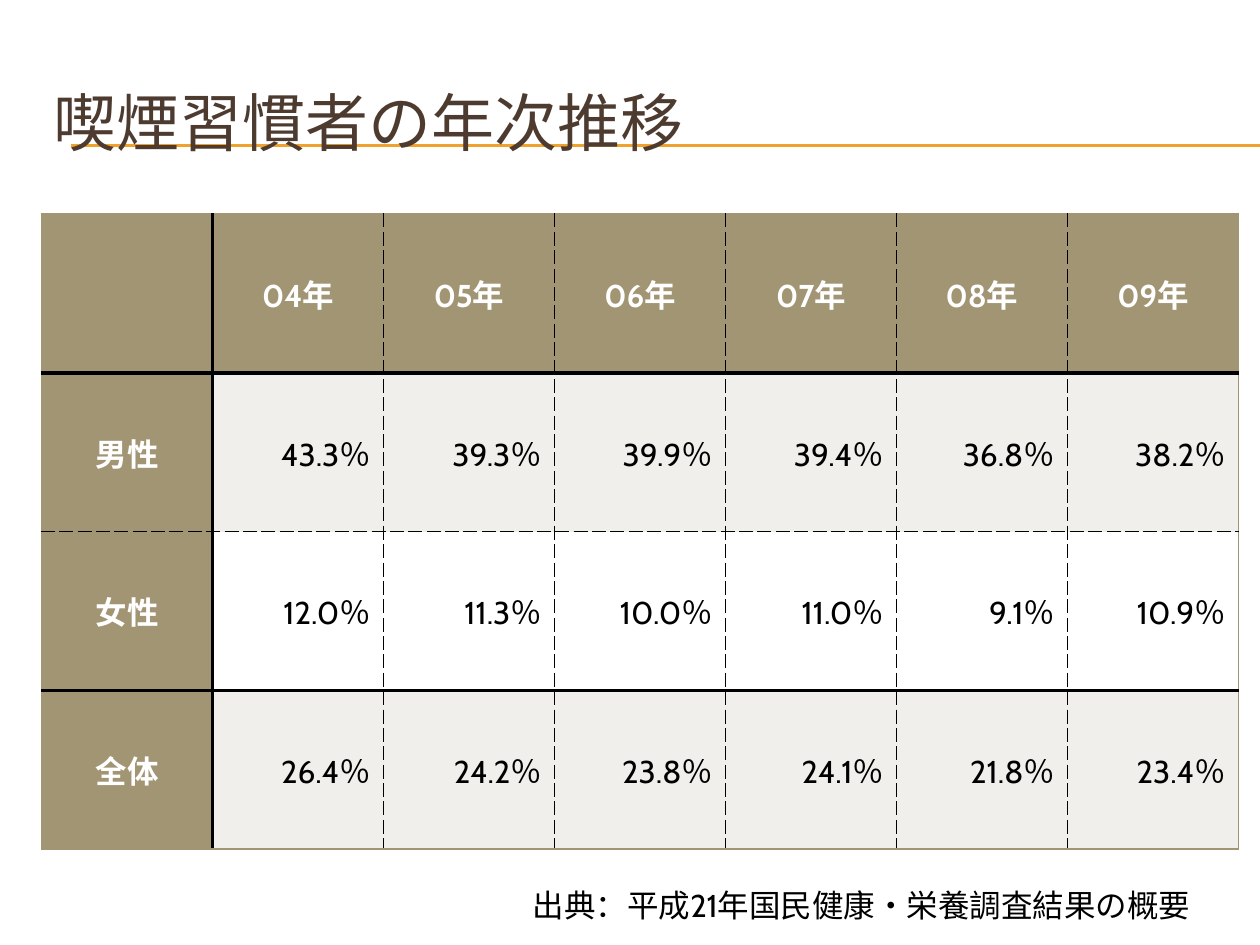
from lxml import etree
from pptx import Presentation, util as u
from pptx.dml.color import RGBColor
from pptx.enum import shapes, text
from pptx.oxml import ns

FONT = "Cabin"
BLACK, WHITE, TAN, PALE = "000000", "FFFFFF", "A19574", "F0EFEB"
BROWN, ORANGE = "4E3B30", "F0A22E"
EDGE, HEAVY, DASH = (TAN, 1, "solid"), (BLACK, 2.25, "solid"), (BLACK, 1, "dash")
COLUMN_RULES = [EDGE, HEAVY] + [DASH] * 5 + [EDGE]
ROW_RULES = [EDGE, HEAVY, DASH, HEAVY, EDGE]
ROW_FILLS = [TAN, PALE, WHITE, PALE]
SMOKERS = [
    ["", "04年", "05年", "06年", "07年", "08年", "09年"],
    ["男性", "43.3％", "39.3％", "39.9％", "39.4％", "36.8％", "38.2％"],
    ["女性", "12.0％", "11.3％", "10.0％", "11.0％", "9.1％", "10.9％"],
    ["全体", "26.4％", "24.2％", "23.8％", "24.1％", "21.8％", "23.4％"],
]


def color(value):
    """Turn a hex string into a colour."""
    return RGBColor.from_string(value)


def write(tf, words, size=18, fg=BLACK, bold=False, align=text.PP_ALIGN.LEFT):
    """Write one formatted paragraph into a text frame."""
    p = tf.paragraphs[0]
    p.alignment = align
    r = p.add_run()
    r.text = words
    r.font.name, r.font.size, r.font.bold = FONT, u.Pt(size), bold
    r.font.color.rgb = color(fg)


def add_text(s, box, words, anchor=text.MSO_ANCHOR.TOP, **fmt):
    """Add a wrapping text box."""
    tf = s.shapes.add_textbox(*map(u.Inches, box)).text_frame
    tf.word_wrap = True
    tf.vertical_anchor = anchor
    write(tf, words, **fmt)


def add_rule(s, x1, x2, y):
    """Add a thin horizontal rule."""
    sp = s.shapes.add_connector(shapes.MSO_CONNECTOR.STRAIGHT,
                                *map(u.Inches, (x1, y, x2, y)))
    sp.line.color.rgb = color(ORANGE)
    sp.line.width = u.Pt(0.75)
    etree.SubElement(sp.element.spPr, ns.qn("a:effectLst"))


def set_border(cell, side, rule):
    """Draw one side of a table cell."""
    fg, width, dash = rule
    ln = etree.SubElement(cell._tc.get_or_add_tcPr(), ns.qn("a:ln" + side),
                          w=str(u.Pt(width)))
    fill = etree.SubElement(ln, ns.qn("a:solidFill"))
    etree.SubElement(fill, ns.qn("a:srgbClr"), val=fg)
    etree.SubElement(ln, ns.qn("a:prstDash"), val=dash)


def add_header(s, box, words):
    """Place the title over its double rule."""
    left, top, width, height = box
    for y in (top + 0.65, top + 0.66):
        add_rule(s, left + 0.23, 10, y)
    add_text(s, box, words, text.MSO_ANCHOR.MIDDLE, size=36, fg=BROWN)


def add_smoking_table(s, box, rows):
    """Place the table of smoking rates."""
    left, top, width, height = map(u.Inches, box)
    table = s.shapes.add_table(len(rows), len(rows[0]), left, top, width, height).table
    for col in table.columns:
        col.width = width // len(rows[0])
    for i, row in enumerate(rows):
        table.rows[i].height = height // len(rows)
        for j, words in enumerate(row):
            cell = table.cell(i, j)
            head = i == 0 or j == 0
            for side, rule in (("L", COLUMN_RULES[j]), ("R", COLUMN_RULES[j + 1]),
                               ("T", ROW_RULES[i]), ("B", ROW_RULES[i + 1])):
                set_border(cell, side, rule)
            cell.fill.solid()
            cell.fill.fore_color.rgb = color(TAN if head else ROW_FILLS[i])
            cell.vertical_anchor = text.MSO_ANCHOR.MIDDLE
            if words:
                write(cell.text_frame, words, fg=WHITE if head else BLACK, bold=head,
                      align=text.PP_ALIGN.CENTER if head else text.PP_ALIGN.RIGHT)


def main():
    """Build and save the slide."""
    prs = Presentation()
    prs.slide_width, prs.slide_height = u.Inches(10), u.Inches(7.5)
    s = prs.slides.add_slide(prs.slide_layouts[6])
    add_header(s, (0.33, 0.5, 9.5, 0.92), "喫煙習慣者の年次推移")
    add_smoking_table(s, (0.33, 1.7, 9.5, 5.04), SMOKERS)
    add_text(s, (4.13, 6.98, 5.75, 0.4), "出典：平成21年国民健康・栄養調査結果の概要")
    prs.save("out.pptx")


if __name__ == "__main__":
    main()
